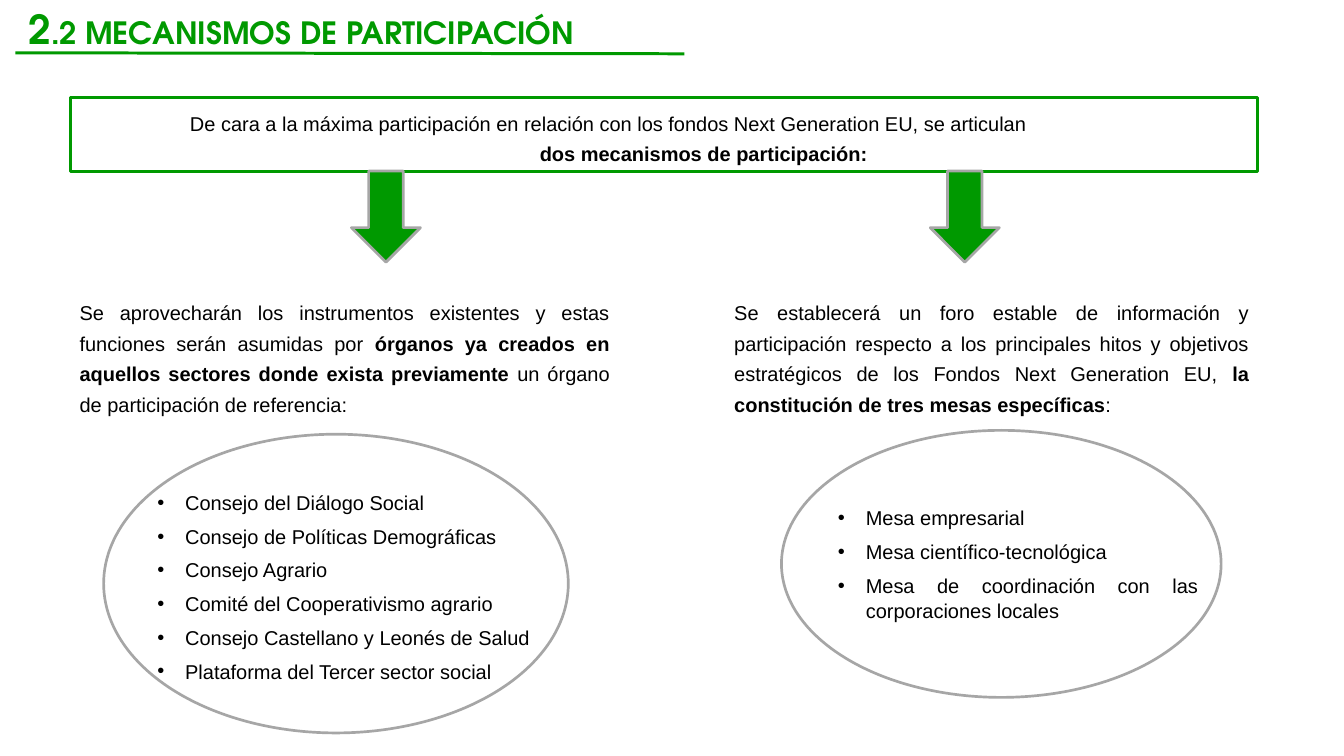
from lxml.etree import SubElement
from pptx import Presentation
from pptx.dml.color import RGBColor
from pptx.enum.shapes import MSO_CONNECTOR, MSO_SHAPE
from pptx.enum.text import PP_ALIGN
from pptx.oxml.ns import qn
from pptx.util import Inches, Pt

GREEN = RGBColor(0x00, 0x99, 0x00)
GRAY = RGBColor(0xA6, 0xA6, 0xA6)
BLACK = RGBColor(0x00, 0x00, 0x00)

COUNCILS = [
    "Consejo del Diálogo Social",
    "Consejo de Políticas Demográficas",
    "Consejo Agrario",
    "Comité del Cooperativismo agrario",
    "Consejo Castellano y Leonés de Salud",
    "Plataforma del Tercer sector social",
]
TABLES = [
    "Mesa empresarial",
    "Mesa científico-tecnológica",
    "Mesa de coordinación con las corporaciones locales",
]


def add_frame(slide, box):
    frame = slide.shapes.add_textbox(*map(Inches, box)).text_frame
    frame.word_wrap = True
    return frame


def add_run(para, text, size=15, bold=False, font="Arial", color=BLACK):
    run = para.add_run()
    run.text = text
    run.font.name = font
    run.font.size = Pt(size)
    run.font.bold = bold
    run.font.color.rgb = color


def add_shape(slide, kind, box, line, width, fill=None):
    shape = slide.shapes.add_shape(kind, *map(Inches, box))
    shape.shadow.inherit = False
    shape.line.color.rgb = line
    shape.line.width = Pt(width)
    if fill is None:
        shape.fill.background()
    else:
        shape.fill.solid()
        shape.fill.fore_color.rgb = fill


def add_title(slide):
    para = add_frame(slide, (0.2, 0, 6.93, 0.6)).paragraphs[0]
    for text, size in (("2", 30), (".2 MECANISMOS DE PARTICIPACIÓN", 23)):
        add_run(para, text, size, True, "TeX Gyre Adventor", GREEN)
    ends = map(Inches, (0.16, 0.55, 7.13, 0.56))
    rule = slide.shapes.add_connector(MSO_CONNECTOR.STRAIGHT, *ends)
    rule.line.color.rgb = GREEN
    rule.line.width = Pt(2.25)
    SubElement(rule._element.spPr, qn("a:effectLst"))


def add_intro(slide):
    add_shape(slide, MSO_SHAPE.RECTANGLE, (0.73, 1.01, 12.37, 0.78), GREEN, 2.25)
    frame = add_frame(slide, (1.88, 1.04, 9.82, 0.74))
    first, second = frame.paragraphs[0], frame.add_paragraph()
    first.line_spacing = second.line_spacing = Pt(23)
    add_run(first, "De cara a la máxima participación en relación con los fondos "
                   "Next Generation EU, se articulan")
    second.alignment = PP_ALIGN.CENTER
    second._p.get_or_add_pPr().set("marL", str(Inches(1.08)))
    add_run(second, "dos mecanismos de participación:", bold=True)


def add_body(slide, box, runs):
    para = add_frame(slide, box).paragraphs[0]
    para.alignment = PP_ALIGN.JUSTIFY
    para.line_spacing = Pt(23)
    for text, bold in runs:
        add_run(para, text, bold=bold)


def add_list(slide, box, items):
    frame = add_frame(slide, box)
    for i, item in enumerate(items):
        para = frame.add_paragraph() if i else frame.paragraphs[0]
        para.alignment = PP_ALIGN.JUSTIFY
        para.line_spacing = 1.07
        para.space_before = Pt(6)
        props = para._p.get_or_add_pPr()
        props.set("marL", str(Inches(0.29)))
        props.set("indent", str(-Inches(0.29)))
        color = SubElement(props, qn("a:buClr"))
        SubElement(color, qn("a:srgbClr"), val=str(BLACK))
        SubElement(props, qn("a:buFont"), typeface="Arial")
        SubElement(props, qn("a:buChar"), char="•")
        add_run(para, item)


def main():
    deck = Presentation()
    deck.slide_width, deck.slide_height = Inches(14), Inches(7.87)
    slide = deck.slides.add_slide(deck.slide_layouts[6])
    add_title(slide)
    add_intro(slide)
    for left in (3.66, 9.69):
        add_shape(slide, MSO_SHAPE.DOWN_ARROW, (left, 1.78, 0.72, 0.95), GRAY, 2, GREEN)
    for box in ((1.08, 4.52, 4.84, 3.11), (8.14, 4.48, 4.58, 2.78)):
        add_shape(slide, MSO_SHAPE.OVAL, box, GRAY, 2)
    add_body(slide, (0.73, 3.01, 5.72, 1.38), [
        ("Se aprovecharán los instrumentos existentes y estas funciones "
         "serán asumidas por ", False),
        ("órganos ya creados en aquellos sectores donde exista previamente ", True),
        ("un órgano de participación de referencia:", False),
    ])
    add_body(slide, (7.55, 3.01, 5.56, 1.38), [
        ("Se establecerá un foro estable de información y participación respecto "
         "a los principales hitos y objetivos estratégicos de los Fondos "
         "Next Generation EU, ", False),
        ("la constitución de tres mesas específicas", True),
        (":", False),
    ])
    add_list(slide, (1.54, 5.04, 4.39, 2.12), COUNCILS)
    add_list(slide, (8.63, 5.2, 3.95, 1.33), TABLES)
    deck.save("out.pptx")


if __name__ == "__main__":
    main()
